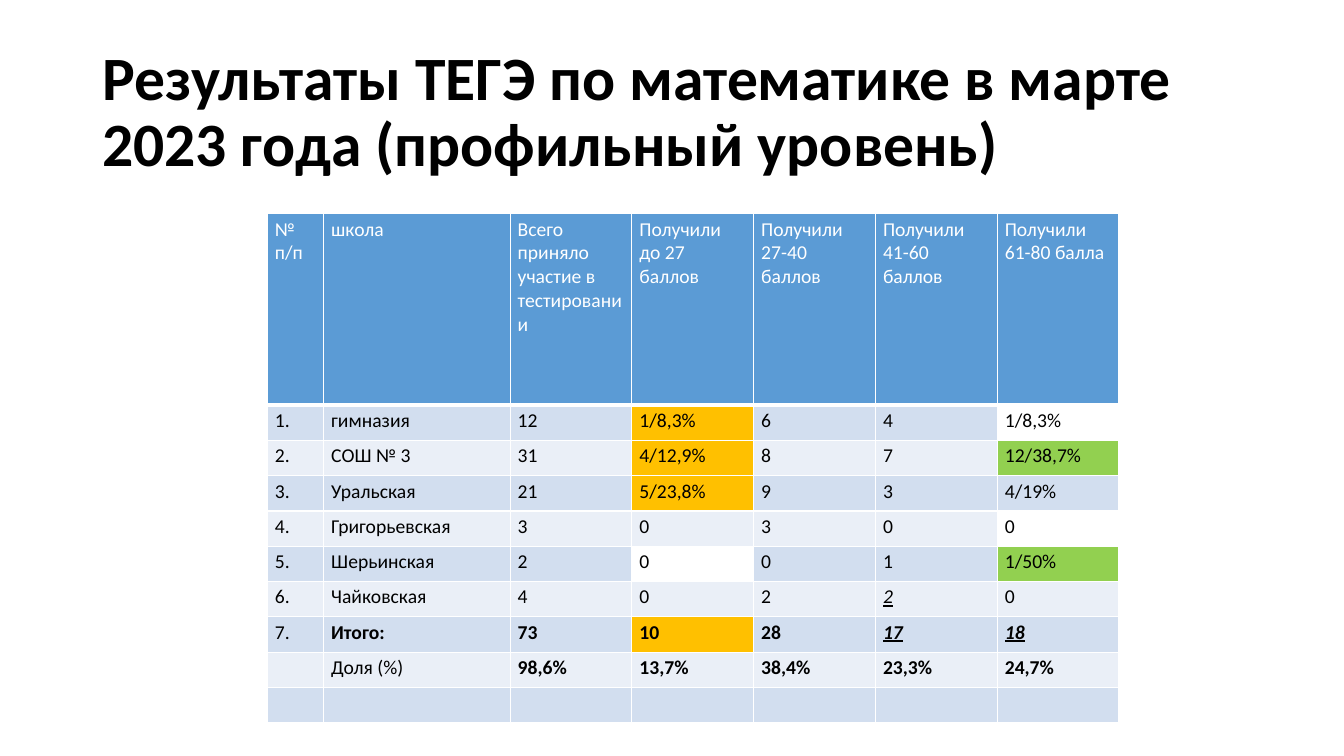
from dataclasses import dataclass, field

from lxml.etree import SubElement
from pptx import Presentation
from pptx.dml.color import RGBColor
from pptx.enum.text import MSO_ANCHOR
from pptx.oxml.ns import qn
from pptx.table import _Cell
from pptx.text.text import Font
from pptx.util import Pt

COLORS = {
    "header": "5B9BD5",
    "band_dark": "D2DEEF",
    "band_light": "EAEFF7",
    "low": "FFC000",
    "high": "92D050",
    "white": "FFFFFF",
    "black": "000000",
}
FONT_NAME = "Calibri"
COLUMN_WIDTHS = [40.2, 133.2] + [87] * 5
HEADER_HEIGHT, ROW_HEIGHT = 136.8, 25.2


@dataclass
class ResultRow:
    values: list[str]
    fills: dict[int, str] = field(default_factory=dict)  # "none" leaves a cell clear
    bold: set[int] = field(default_factory=set)
    underlined: set[int] = field(default_factory=set)


HEADER = ResultRow([
    "№ п/п", "школа", "Всего приняло участие в тестировании", "Получили до 27 баллов",
    "Получили 27-40 баллов", "Получили 41-60 баллов", "Получили 61-80 балла",
])
RESULTS = [
    ResultRow(["1.", "гимназия", "12", "1/8,3%", "6", "4", "1/8,3%"], {3: "low", 6: "none"}),
    ResultRow(["2.", "СОШ № 3", "31", "4/12,9%", "8", "7", "12/38,7%"], {3: "low", 6: "high"}),
    ResultRow(["3.", "Уральская", "21", "5/23,8%", "9", "3", "4/19%"], {3: "low"}),
    ResultRow(["4.", "Григорьевская", "3", "0", "3", "0", "0"], {6: "none"}),
    ResultRow(["5.", "Шерьинская", "2", "0", "0", "1", "1/50%"], {3: "none", 6: "high"}),
    ResultRow(["6.", "Чайковская", "4", "0", "2", "2", "0"], underlined={5}),
    ResultRow(["7.", "Итого:", "73", "10", "28", "17", "18"], {3: "low"},
              bold=set(range(1, 7)), underlined={5, 6}),
    ResultRow(["", "Доля (%)", "98,6%", "13,7%", "38,4%", "23,3%", "24,7%"],
              bold=set(range(2, 7))),
    ResultRow([""] * 7),
]


def rgb(color: str) -> RGBColor:
    return RGBColor.from_string(COLORS[color])


def style_font(font: Font, size: float, color: str, bold: bool = False) -> None:
    font.name = FONT_NAME
    font.size = Pt(size)
    font.bold = bold
    font.color.rgb = rgb(color)


def add_borders(cell: _Cell, top: float, bottom: float) -> None:
    properties = cell._tc.get_or_add_tcPr()
    for side, width in (("L", 1), ("R", 1), ("T", top), ("B", bottom)):
        border = SubElement(properties, qn(f"a:ln{side}"), w=str(Pt(width)))
        border_fill = SubElement(border, qn("a:solidFill"))
        SubElement(border_fill, qn("a:srgbClr"), val=COLORS["white"])


def fill_cell(cell: _Cell, row: ResultRow, column: int, band: str, text_color: str) -> None:
    cell.margin_left = cell.margin_right = Pt(5.4)
    cell.margin_top = cell.margin_bottom = Pt(2.7)
    fill = row.fills.get(column, band)
    if fill == "none":
        cell.fill.background()
    else:
        cell.fill.solid()
        cell.fill.fore_color.rgb = rgb(fill)

    paragraph = cell.text_frame.paragraphs[0]
    paragraph.text = row.values[column]
    for run in paragraph.runs:
        style_font(run.font, 14, text_color, column in row.bold)
        run.font.italic = run.font.underline = column in row.underlined
    if not paragraph.runs:
        # Empty cells keep the text size so that the row stays low
        SubElement(paragraph._p, qn("a:endParaRPr"), sz="1400")


def main() -> None:
    presentation = Presentation()
    presentation.slide_width, presentation.slide_height = Pt(960), Pt(540)
    slide = presentation.slides.add_slide(presentation.slide_layouts[6])

    # Title
    title = slide.shapes.add_textbox(Pt(66), Pt(28.75), Pt(828), Pt(104.4)).text_frame
    title.word_wrap = True
    title.vertical_anchor = MSO_ANCHOR.MIDDLE
    title.text = "Результаты ТЕГЭ по математике в марте 2023 года (профильный уровень)"
    title.paragraphs[0].line_spacing = 0.9
    style_font(title.paragraphs[0].runs[0].font, 44, "black", bold=True)

    # Results table
    rows = [HEADER, *RESULTS]
    results = slide.shapes.add_table(
        len(rows), len(COLUMN_WIDTHS), Pt(191), Pt(152.6),
        Pt(sum(COLUMN_WIDTHS)), Pt(HEADER_HEIGHT + ROW_HEIGHT * len(RESULTS)),
    ).table
    results.horz_banding = False
    results.first_row = False
    for column, width in zip(results.columns, COLUMN_WIDTHS):
        column.width = Pt(width)

    for index, row in enumerate(rows):
        is_header = index == 0
        results.rows[index].height = Pt(HEADER_HEIGHT if is_header else ROW_HEIGHT)
        band = "header" if is_header else "band_dark" if index % 2 else "band_light"
        for column in range(len(COLUMN_WIDTHS)):
            cell = results.cell(index, column)
            add_borders(cell, top=1, bottom=3 if is_header else 1)
            fill_cell(cell, row, column, band, "white" if is_header else "black")

    presentation.save("out.pptx")


if __name__ == "__main__":
    main()
